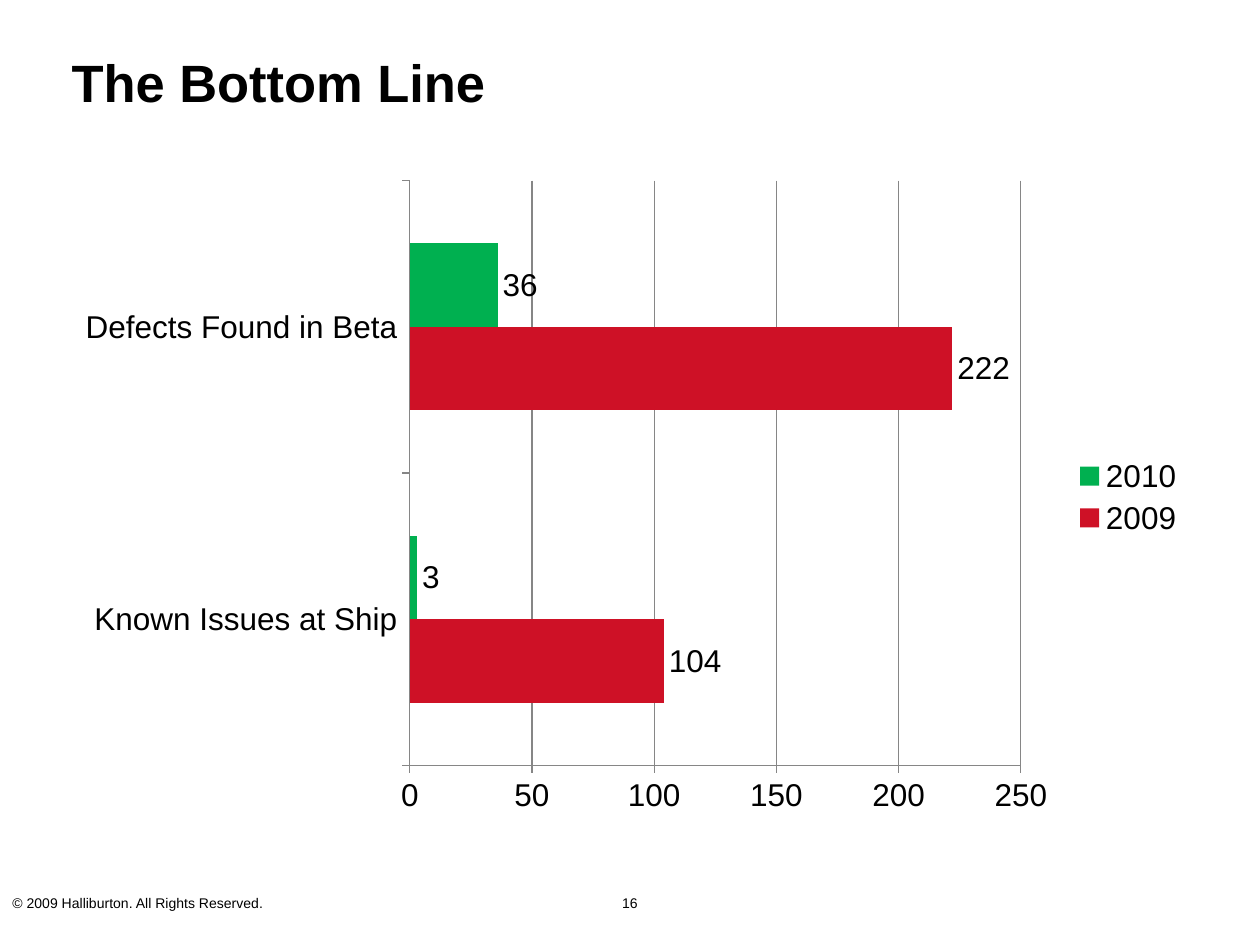
from pptx import Presentation
from pptx.chart.data import CategoryChartData
from pptx.dml.color import RGBColor
from pptx.enum import chart as ch, text
from pptx.util import Inches, Pt

BLACK = "000000"
GRID_GRAY = "868686"


def color(hex_code):
    return RGBColor.from_string(hex_code)


def style_font(font, size, bold=False):
    font.name = "Arial"
    font.size = Pt(size)
    font.bold = bold
    font.color.rgb = color(BLACK)


def add_line_of_text(slide, box, wording, size, bold=False,
                     align=text.PP_ALIGN.LEFT, anchor=text.MSO_ANCHOR.TOP):
    frame = slide.shapes.add_textbox(*map(Inches, box)).text_frame
    frame.word_wrap = True
    frame.vertical_anchor = anchor
    paragraph = frame.paragraphs[0]
    paragraph.alignment = align
    run = paragraph.add_run()
    run.text = wording
    style_font(run.font, size, bold)


def add_title(slide, box):
    add_line_of_text(slide, box, "The Bottom Line", 30, bold=True,
                     anchor=text.MSO_ANCHOR.MIDDLE)


def add_footer(slide, box):
    left, top, width, height = box
    number_width = 2.33
    add_line_of_text(slide, (left, top, 3.17, height),
                     "© 2009 Halliburton. All Rights Reserved.", 8)
    add_line_of_text(slide, (left + (width - number_width) / 2, top, number_width, height),
                     "16", 8, align=text.PP_ALIGN.CENTER)


def add_defect_chart(slide, box):
    defects = CategoryChartData()
    defects.categories = ["Known Issues at Ship", "Defects Found in Beta"]
    defects.add_series("2009", (104, 222))
    defects.add_series("2010", (3, 36))
    chart = slide.shapes.add_chart(
        ch.XL_CHART_TYPE.BAR_CLUSTERED, *map(Inches, box), defects).chart
    style_font(chart.font, 18)
    chart.has_title = False
    chart.has_legend = True
    chart.legend.position = ch.XL_LEGEND_POSITION.RIGHT
    chart.legend.include_in_layout = False

    chart.value_axis.has_major_gridlines = True
    chart.category_axis.has_major_gridlines = False
    for axis in (chart.category_axis, chart.value_axis):
        axis.major_tick_mark = ch.XL_TICK_MARK.OUTSIDE
        axis.minor_tick_mark = ch.XL_TICK_MARK.NONE
    for ruled in (chart.category_axis, chart.value_axis, chart.value_axis.major_gridlines):
        ruled.format.line.color.rgb = color(GRID_GRAY)
        ruled.format.line.width = Pt(0.75)
    chart.value_axis.minimum_scale = 0
    chart.value_axis.maximum_scale = 250
    chart.value_axis.major_unit = 50

    bars = chart.plots[0]
    bars.vary_by_categories = False
    bars.gap_width = 150
    bars.overlap = 0
    for year, fill in zip(bars.series, ("CE1126", "00B050")):
        year.format.fill.solid()
        year.format.fill.fore_color.rgb = color(fill)
        labels = year.data_labels
        labels.show_value = True
        labels.position = ch.XL_LABEL_POSITION.OUTSIDE_END
        style_font(labels.font, 18)


def main():
    deck = Presentation()
    deck.slide_width, deck.slide_height = Inches(10), Inches(7.5)
    slide = deck.slides.add_slide(deck.slide_layouts[6])
    add_footer(slide, (0, 7.05, 10, 0.3))
    add_title(slide, (0.47, 0.18, 9.03, 0.94))
    add_defect_chart(slide, (0.5, 1.33, 9, 5.23))
    deck.save("out.pptx")


if __name__ == "__main__":
    main()
